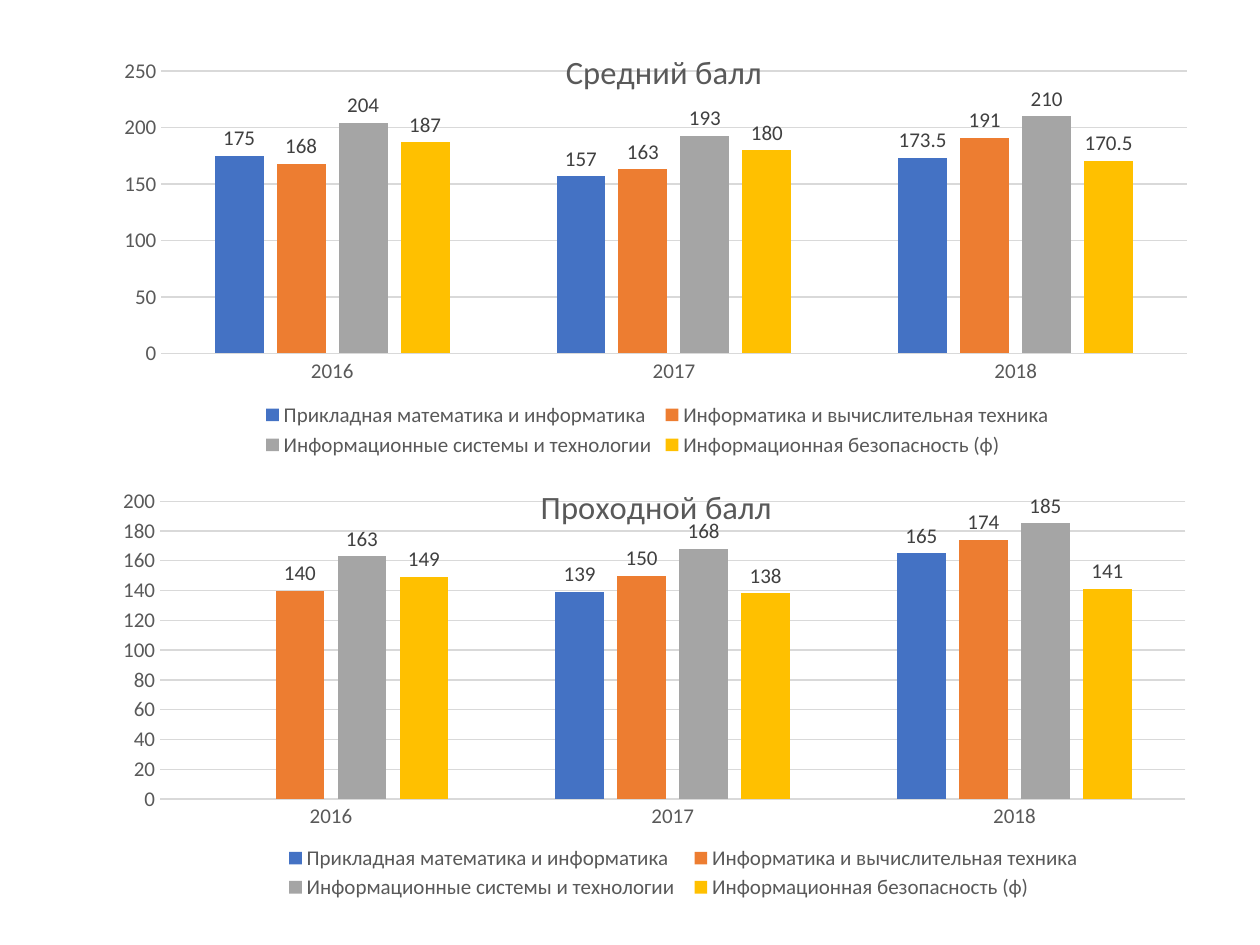
from lxml import etree
from pptx import Presentation, util as u
from pptx.chart.data import CategoryChartData
from pptx.dml.color import RGBColor
from pptx.enum import chart as ec
from pptx.oxml.ns import qn

YEARS = ["2016", "2017", "2018"]
PROGRAMS = {
    "Прикладная математика и информатика": "4472C4",
    "Информатика и вычислительная техника": "ED7D31",
    "Информационные системы и технологии": "A5A5A5",
    "Информационная безопасность (ф)": "FFC000",
}
AVERAGE = [(175, 157, 173.5), (168, 163, 191), (204, 193, 210), (187, 180, 170.5)]
PASSING = [(None, 139, 165), (140, 150, 174), (163, 168, 185), (149, 138, 141)]


def rgb(value):
    return RGBColor.from_string(value)


def set_layout(parent, inner=False, **shares):
    """Place a chart part by shares (x, y, w, h) of the chart's size."""
    for old in parent.findall(qn("c:layout")):
        parent.remove(old)
    layout = etree.Element(qn("c:layout"))
    manual = etree.SubElement(layout, qn("c:manualLayout"))
    settings = {"layoutTarget": "inner"} if inner else {}
    settings.update(xMode="edge", yMode="edge", **shares)
    for name, value in settings.items():
        etree.SubElement(manual, qn(f"c:{name}")).set("val", str(value))
    before = [c for c in parent if c.tag in (qn("c:tx"), qn("c:legendPos"))]
    parent.insert(parent.index(before[-1]) + 1 if before else 0, layout)


class Deck:
    font = {"name": "Calibri", "bold": False}
    grey, dark, rule = "595959", "404040", "D9D9D9"

    def __init__(self, width, height):
        self.prs = Presentation()
        self.prs.slide_width, self.prs.slide_height = u.Inches(width), u.Inches(height)
        self.s = self.prs.slides.add_slide(self.prs.slide_layouts[6])

    def style(self, font, size, color):
        for key, value in {**self.font, "size": u.Pt(size)}.items():
            setattr(font, key, value)
        font.color.rgb = rgb(color)

    def line(self, fmt):
        fmt.line.color.rgb = rgb(self.rule)
        fmt.line.width = u.Pt(0.75)

    def columns(self, title, rows, box, plot, top, step, title_at=None, legend_at=None):
        """Add a clustered column chart; box is in shares of the slide."""
        data = CategoryChartData()
        data.categories = YEARS
        for name, values in zip(PROGRAMS, rows):
            data.add_series(name, values)
        w, h = self.prs.slide_width, self.prs.slide_height
        place = [int(share * size) for share, size in zip(box, (w, h, w, h))]
        ch = self.s.shapes.add_chart(ec.XL_CHART_TYPE.COLUMN_CLUSTERED, *place, data).chart
        self.style(ch.font, 10, "000000")
        self.title(ch, title, title_at)
        self.legend(ch, legend_at)
        self.axes(ch, top, step)
        self.bars(ch.plots[0])
        set_layout(ch._chartSpace.chart.plotArea, True, **dict(zip("xywh", plot)))

    def title(self, ch, words, at):
        ch.has_title = True
        tf = ch.chart_title.text_frame
        tf.text = words
        self.style(tf.paragraphs[0].runs[0].font, 18.6, self.grey)
        ch.chart_title.include_in_layout = True
        if at:
            set_layout(ch.chart_title._element, **at)

    def legend(self, ch, at):
        ch.has_legend = True
        ch.legend.position = ec.XL_LEGEND_POSITION.BOTTOM
        ch.legend.include_in_layout = False
        self.style(ch.legend.font, 12, self.grey)
        if at:
            set_layout(ch.legend._element, **at)

    def axes(self, ch, top, step):
        cat, val = ch.category_axis, ch.value_axis
        for axis in (cat, val):
            axis.major_tick_mark = axis.minor_tick_mark = ec.XL_TICK_MARK.NONE
            self.style(axis.tick_labels.font, 12, self.grey)
        self.line(cat.format)
        val.format.line.fill.background()
        self.line(val.major_gridlines.format)
        val.minimum_scale, val.maximum_scale, val.major_unit = 0, top, step

    def bars(self, plot):
        plot.gap_width, plot.overlap, plot.vary_by_categories = 219, -27, False
        for ser, color in zip(plot.series, PROGRAMS.values()):
            ser.format.fill.solid()
            ser.format.fill.fore_color.rgb = rgb(color)
            ser.invert_if_negative = False
            labels = ser.data_labels
            labels.show_value = True
            labels.position = ec.XL_LABEL_POSITION.OUTSIDE_END
            self.style(labels.font, 12, self.dark)


def main():
    deck = Deck(10, 7.5)
    width, height = 0.862, 3.54 / 7.5
    deck.columns("Средний балл", AVERAGE, (0.091, 0.13 / 7.5, width, height),
                 (0.043, 0.123, 0.944, 0.633), 250, 50,
                 title_at={"x": 0.41, "y": 0.06})
    deck.columns("Проходной балл", PASSING, (0.09, 3.67 / 7.5, width, height),
                 (0.043, 0.087, 0.944, 0.668), 200, 20,
                 legend_at={"x": 0.15, "y": 0.85, "w": 0.75, "h": 0.14})
    deck.prs.save("out.pptx")


if __name__ == "__main__":
    main()
